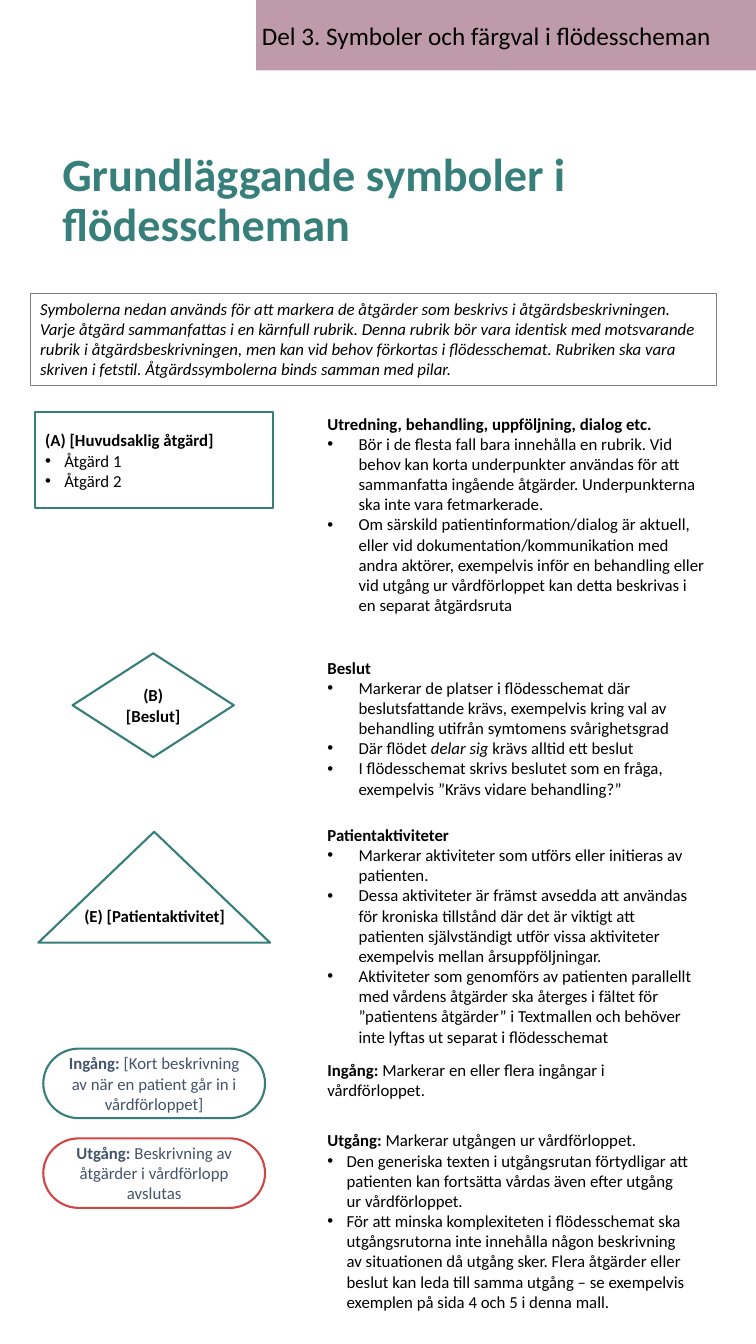
from dataclasses import dataclass

from lxml.etree import SubElement
from pptx import Presentation
from pptx.dml.color import RGBColor
from pptx.enum.shapes import MSO_SHAPE as Shape
from pptx.enum.text import MSO_ANCHOR as Anchor, PP_ALIGN as Align
from pptx.oxml.ns import qn
from pptx.util import Inches, Pt


@dataclass(frozen=True)
class Theme:
    font: str = "Calibri"
    black: str = "000000"
    white: str = "FFFFFF"
    banner: str = "BF9BAA"
    title: str = "377F7A"
    teal: str = "377D7A"
    red: str = "CF4646"
    grey: str = "808080"
    slate: str = "44546A"
    title_size: int = 33
    banner_size: int = 18
    body_size: int = 12


@dataclass(frozen=True)
class Run:
    text: str
    bold: bool = False
    italic: bool = False


@dataclass(frozen=True)
class Para:
    runs: tuple[Run, ...]
    indent: float = 0


@dataclass(frozen=True)
class Box:
    left: float
    top: float
    width: float
    height: float

    def inches(self) -> tuple:
        return tuple(Inches(v) for v in (self.left, self.top, self.width, self.height))


@dataclass(frozen=True)
class Symbol:
    kind: Shape
    box: Box
    paras: tuple[Para, ...] = ()
    line: str = Theme.teal
    color: str = Theme.black
    align: Align = Align.CENTER


@dataclass(frozen=True)
class Note:
    box: Box
    paras: tuple[Para, ...]


THEME = Theme()
WIDE, NARROW = 0.31, 0.19


def plain(text: str) -> Para:
    return Para((Run(text),))


def bold(text: str) -> Para:
    return Para((Run(text, bold=True),))


def labelled(label: str, text: str) -> Para:
    return Para((Run(label, bold=True), Run(text)))


def bullets(indent: float, *texts: str) -> tuple[Para, ...]:
    return tuple(Para((Run(t),), indent) for t in texts)


def rgb(color: str) -> RGBColor:
    return RGBColor.from_string(color)


def write(tf, paras: tuple[Para, ...], *, size: int = THEME.body_size,
          color: str = THEME.black, align: Align = Align.LEFT,
          anchor: Anchor = Anchor.TOP, spacing: float = 1.0) -> None:
    tf.word_wrap = True
    tf.vertical_anchor = anchor
    for i, para in enumerate(paras):
        p = tf.add_paragraph() if i else tf.paragraphs[0]
        p.alignment = align
        p.line_spacing = spacing
        if para.indent:
            pPr = p._p.get_or_add_pPr()
            pPr.set("marL", str(Inches(para.indent)))
            pPr.set("indent", str(-Inches(para.indent)))
            SubElement(pPr, qn("a:buFont")).set("typeface", "Arial")
            SubElement(pPr, qn("a:buChar")).set("char", "•")
        for run in para.runs:
            r = p.add_run()
            r.text = run.text
            r.font.name = THEME.font
            r.font.size = Pt(size)
            r.font.bold = run.bold
            r.font.italic = run.italic
            r.font.color.rgb = rgb(color)


def add_text(s, box: Box, *paras: Para, **fmt) -> None:
    write(s.shapes.add_textbox(*box.inches()).text_frame, paras, **fmt)


def add_shape(s, kind: Shape, box: Box, *, fill: str | None = None,
              line: str | None = None, weight: float = 1.5):
    sp = s.shapes.add_shape(kind, *box.inches())
    sp.shadow.inherit = False
    if fill:
        sp.fill.solid()
        sp.fill.fore_color.rgb = rgb(fill)
    else:
        sp.fill.background()
    if line:
        sp.line.color.rgb = rgb(line)
        sp.line.width = Pt(weight)
    else:
        sp.line.fill.background()
    return sp


def add_symbol(s, symbol: Symbol) -> None:
    sp = add_shape(s, symbol.kind, symbol.box, fill=THEME.white, line=symbol.line)
    if symbol.paras:
        write(sp.text_frame, symbol.paras, color=symbol.color,
              align=symbol.align, anchor=Anchor.MIDDLE)


INTRO = Para((Run(
    "Symbolerna nedan används för att markera de åtgärder som beskrivs i åtgärdsbeskrivningen. "
    "Varje åtgärd sammanfattas i en kärnfull rubrik. Denna rubrik bör vara identisk med "
    "motsvarande rubrik i åtgärdsbeskrivningen, men kan vid behov förkortas i flödesschemat. "
    "Rubriken ska vara skriven i fetstil. Åtgärdssymbolerna binds samman med pilar.",
    italic=True),))

NOTES = (
    Note(Box(3.15, 4.05, 3.94, 2.12), (
        bold("Utredning, behandling, uppföljning, dialog etc."),
        *bullets(
            WIDE,
            "Bör i de flesta fall bara innehålla en rubrik. Vid behov kan korta underpunkter "
            "användas för att sammanfatta ingående åtgärder. Underpunkterna ska inte vara "
            "fetmarkerade.",
            "Om särskild patientinformation/dialog är aktuell, eller vid "
            "dokumentation/kommunikation med andra aktörer, exempelvis inför en behandling "
            "eller vid utgång ur vårdförloppet kan detta beskrivas i en separat åtgärdsruta"))),
    Note(Box(3.15, 6.47, 3.94, 1.51), (
        bold("Beslut"),
        *bullets(
            WIDE,
            "Markerar de platser i flödesschemat där beslutsfattande krävs, exempelvis kring "
            "val av behandling utifrån symtomens svårighetsgrad"),
        Para((Run("Där flödet "), Run("delar sig ", italic=True),
              Run("krävs alltid ett beslut")), WIDE),
        *bullets(
            WIDE,
            "I flödesschemat skrivs beslutet som en fråga, exempelvis "
            "”Krävs vidare behandling?”"))),
    Note(Box(3.15, 8.13, 3.94, 0.64), (
        bold("Patientaktiviteter"),
        *bullets(
            WIDE,
            "Markerar aktiviteter som utförs eller initieras av patienten.",
            "Dessa aktiviteter är främst avsedda att användas för kroniska tillstånd där det "
            "är viktigt att patienten självständigt utför vissa aktiviteter exempelvis mellan "
            "årsuppföljningar.",
            "Aktiviteter som genomförs av patienten parallellt med vårdens åtgärder ska "
            "återges i fältet för ”patientens åtgärder” i Textmallen och behöver inte lyftas "
            "ut separat i flödesschemat"))),
    Note(Box(3.15, 10.46, 3.94, 0.64), (
        labelled("Ingång: ", "Markerar en eller flera ingångar i vårdförloppet."),)),
    Note(Box(3.15, 11.16, 3.79, 2.06), (
        labelled("Utgång: ", "Markerar utgången ur vårdförloppet."),
        *bullets(
            NARROW,
            "Den generiska texten i utgångsrutan förtydligar att patienten kan fortsätta "
            "vårdas även efter utgång ur vårdförloppet.",
            "För att minska komplexiteten i flödesschemat ska utgångsrutorna inte innehålla "
            "någon beskrivning av situationen då utgång sker. Flera åtgärder eller beslut kan "
            "leda till samma utgång – se exempelvis exemplen på sida 4 och 5 i denna mall."))),
)

SYMBOLS = (
    Symbol(Shape.RECTANGLE, Box(0.35, 4.09, 2.36, 0.95),
           (bold("(A) [Huvudsaklig åtgärd]"), *bullets(NARROW, "Åtgärd 1", "Åtgärd 2")),
           align=Align.LEFT),
    Symbol(Shape.FLOWCHART_DECISION, Box(0.72, 6.48, 1.6, 1.03), (bold("(B) [Beslut]"),)),
    Symbol(Shape.ISOSCELES_TRIANGLE, Box(0.38, 8.25, 2.3, 1.1)),
    Symbol(Shape.FLOWCHART_TERMINATOR, Box(0.43, 10.4, 2.2, 0.69),
           (labelled("Ingång: ", "[Kort beskrivning av när en patient går in i vårdförloppet]"),),
           color=THEME.slate),
    Symbol(Shape.FLOWCHART_TERMINATOR, Box(0.43, 11.29, 2.2, 0.69),
           (labelled("Utgång: ", "Beskrivning av åtgärder i vårdförlopp avslutas"),),
           line=THEME.red, color=THEME.slate),
)


def main() -> None:
    prs = Presentation()
    prs.slide_width, prs.slide_height = Inches(7.5), Inches(13.33)
    s = prs.slides.add_slide(prs.slide_layouts[6])
    add_shape(s, Shape.RECTANGLE, Box(2.54, 0, 4.96, 0.7), fill=THEME.banner)
    add_text(s, Box(2.5, 0.15, 5, 0.4), plain("Del 3. Symboler och färgval i flödesscheman"),
             size=THEME.banner_size)
    add_text(s, Box(0.52, 0.71, 6.47, 2.58), bold("Grundläggande symboler i flödesscheman"),
             size=THEME.title_size, color=THEME.title, anchor=Anchor.MIDDLE, spacing=0.9)
    intro = add_shape(s, Shape.RECTANGLE, Box(0.3, 2.91, 6.81, 0.91),
                      line=THEME.grey, weight=0.75)
    write(intro.text_frame, (INTRO,))
    for note in NOTES:
        add_text(s, note.box, *note.paras)
    for symbol in SYMBOLS:
        add_symbol(s, symbol)
    add_text(s, Box(0.69, 8.93, 1.69, 0.3), bold("(E) [Patientaktivitet]"), align=Align.CENTER)
    prs.save("out.pptx")


if __name__ == "__main__":
    main()
